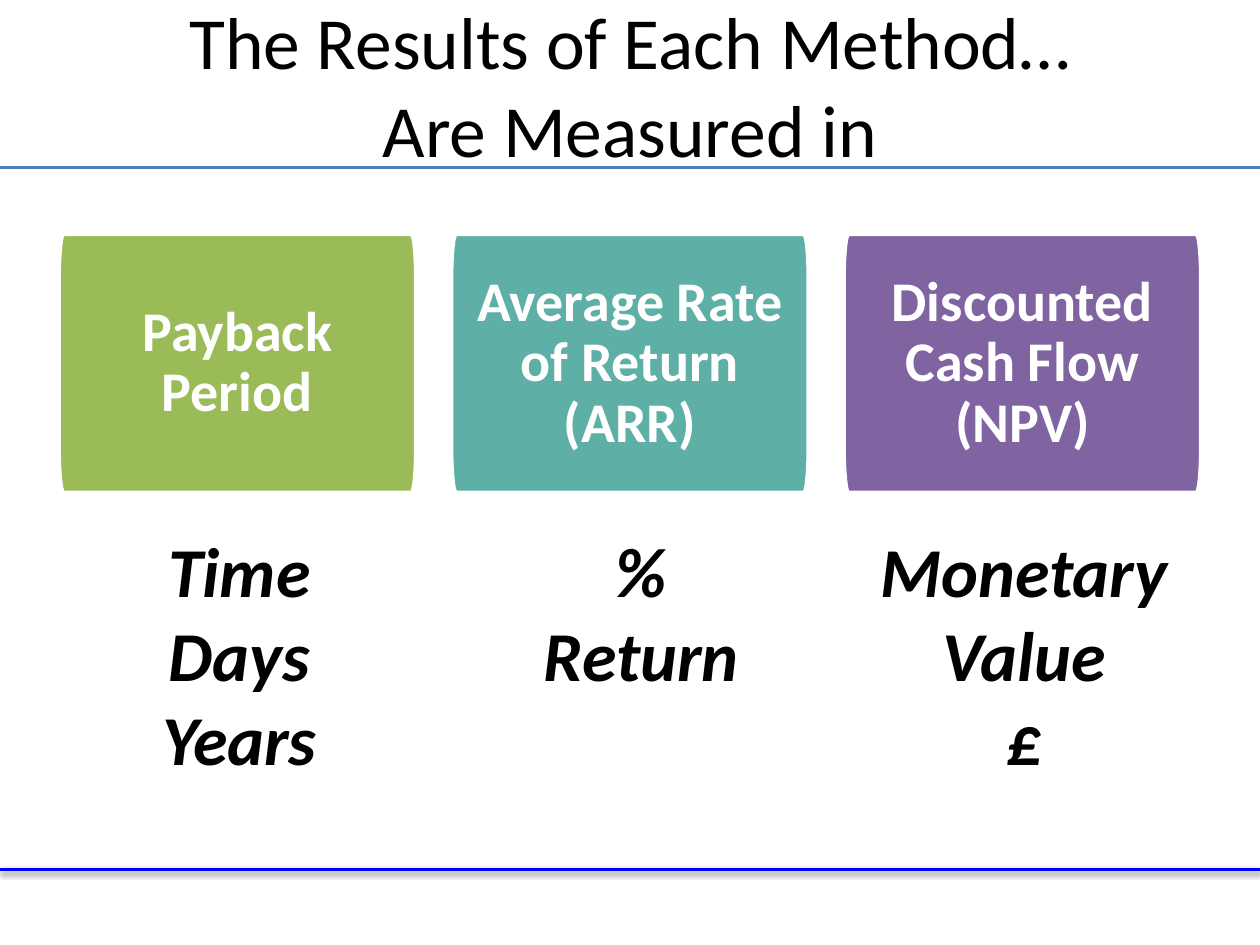
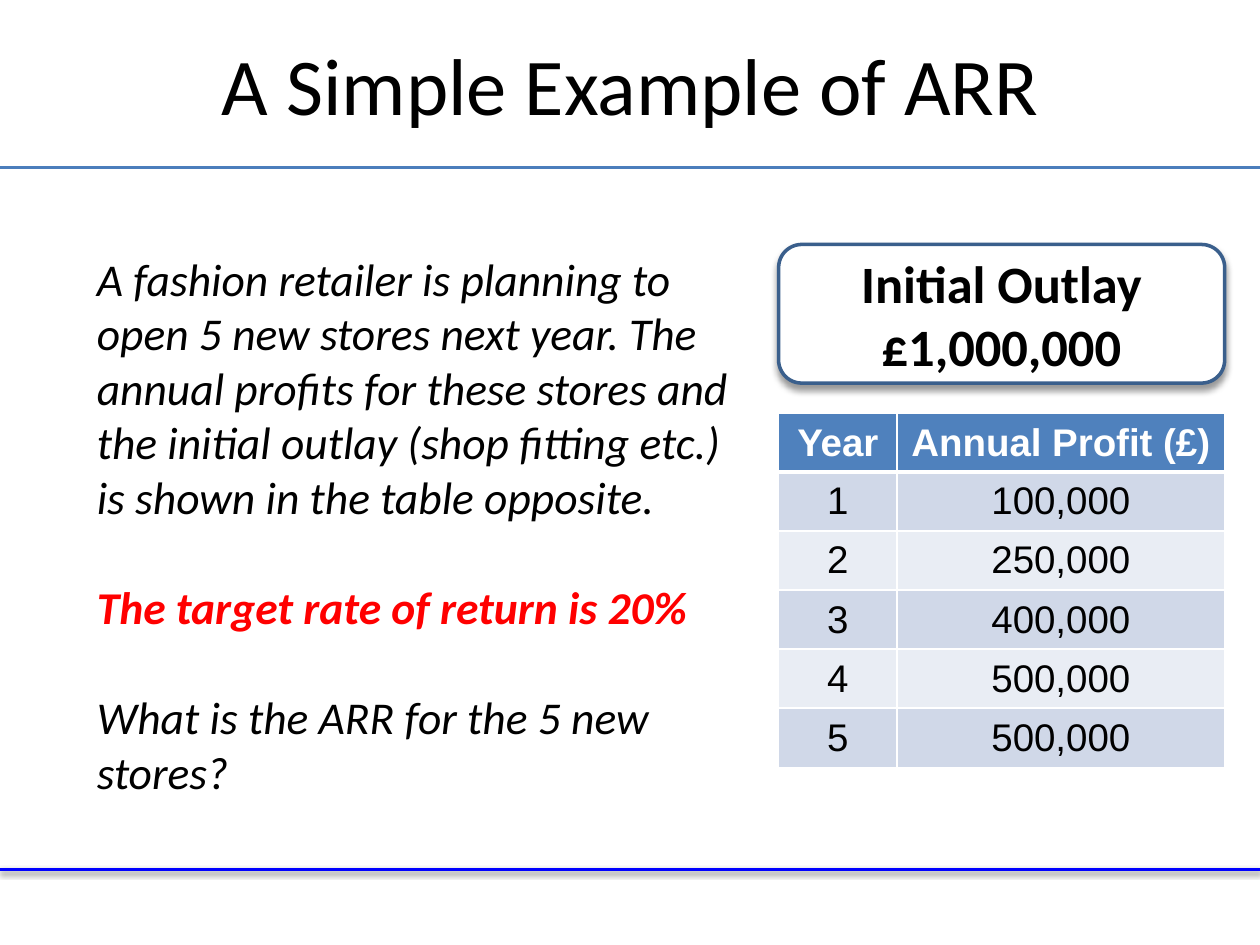
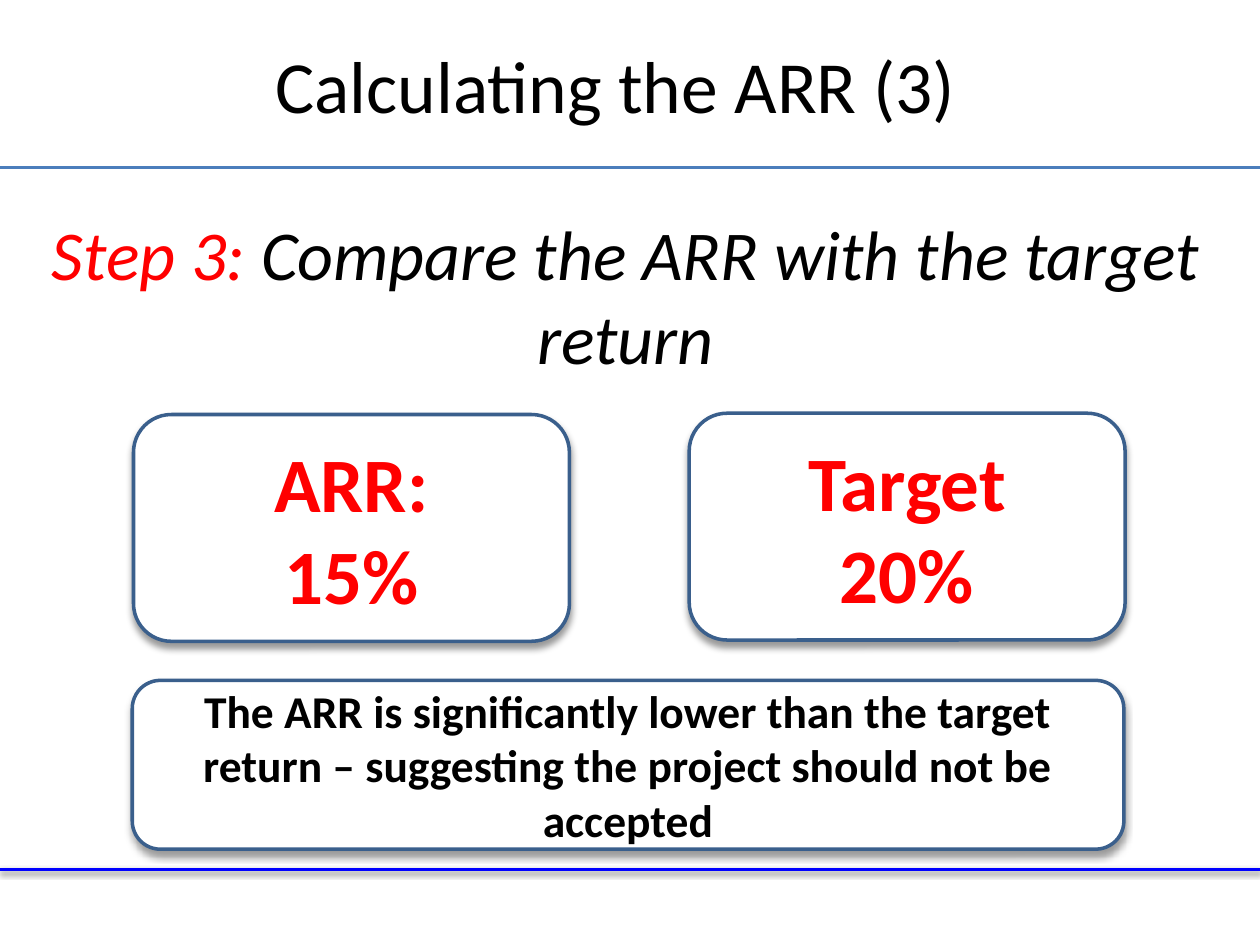
from dataclasses import dataclass
from math import cos, pi, sin

from lxml import etree
from pptx import Presentation
from pptx.dml.color import RGBColor
from pptx.enum.shapes import MSO_CONNECTOR, MSO_SHAPE
from pptx.enum.text import MSO_ANCHOR, PP_ALIGN
from pptx.oxml.ns import qn
from pptx.util import Inches, Pt

LINE = MSO_CONNECTOR.STRAIGHT
ROUND = MSO_SHAPE.ROUNDED_RECTANGLE
MID, TOP = MSO_ANCHOR.MIDDLE, MSO_ANCHOR.TOP
LEFT, MIDDLE = PP_ALIGN.LEFT, PP_ALIGN.CENTER
WIDE, HIGH = Inches(10), Inches(7.5)


@dataclass(frozen=True)
class Theme:
    font: str = "Calibri"
    grid: str = "Arial"
    black: str = "000000"
    white: str = "FFFFFF"
    red: str = "FF0000"
    blue: str = "0000FF"
    rule: str = "4B7EBC"
    edge: str = "3A5F8C"
    head: str = "4F81BD"
    bands: tuple = ("D0D8E8", "E9EDF4")
    cards: tuple = ("9BBB59", "5EAFA6", "8064A2")
    title: int = 42
    large: int = 44
    lead: int = 40
    label: int = 32
    panel: int = 30
    body: int = 26
    cell: int = 22


T = Theme()


def across(share):
    """Percent of the slide's width."""
    return round(WIDE * share / 100)


def down(share):
    """Percent of the slide's height."""
    return round(HIGH * share / 100)


def place(x, y, w, h):
    return across(x), down(y), across(w), down(h)


def rgb(code):
    return RGBColor.from_string(code)


# Text: each paragraph is a string or a list of (string, format) runs
def write(frame, *paras, size=T.body, font=T.font, color=T.black, bold=False,
          italic=False, align=MIDDLE, anchor=MID, spacing=None, gap=0):
    frame.word_wrap = True
    frame.vertical_anchor = anchor
    for i, para in enumerate(paras):
        p = frame.add_paragraph() if i else frame.paragraphs[0]
        p.alignment = align
        if spacing:
            p.line_spacing = spacing
        if i and gap:
            p.space_before = Pt(gap)
        for words, own in [(para, {})] if isinstance(para, str) else para:
            for j, line in enumerate(words.split("\v")):
                if j:
                    p.add_line_break()
                run = p.add_run()
                run.text = line
                run.font.name = font
                run.font.size = Pt(size)
                run.font.bold = own.get("bold", bold)
                run.font.italic = italic
                run.font.color.rgb = rgb(own.get("color", color))


def label(slide, area, *paras, **look):
    write(slide.shapes.add_textbox(*place(*area)).text_frame, *paras, **look)


# Lines, shadows and filled shapes
def shade(item, blur, dist, alpha):
    props = item._element.spPr
    effects = props.find(qn("a:effectLst"))
    shadow = etree.SubElement(effects, qn("a:outerShdw"), blurRad=str(Pt(blur)),
                              dist=str(Pt(dist)), dir="5400000", rotWithShape="0")
    tint = etree.SubElement(shadow, qn("a:srgbClr"), val=T.black)
    etree.SubElement(tint, qn("a:alpha"), val=str(alpha * 1000))


def rule(slide, y, color, width):
    line = slide.shapes.add_connector(LINE, 0, down(y), WIDE, down(y))
    line.line.color.rgb = rgb(color)
    line.line.width = Pt(width)
    etree.SubElement(line._element.spPr, qn("a:effectLst"))
    return line


def paint(shape, fill, edge):
    shape.shadow.inherit = False
    shape.fill.solid()
    shape.fill.fore_color.rgb = rgb(fill)
    shape.line.color.rgb = rgb(edge)
    shape.line.width = Pt(2)


def panel(slide, area, *paras, **look):
    shape = slide.shapes.add_shape(ROUND, *place(*area))
    paint(shape, T.white, T.edge)
    shade(shape, 4, 3, 40)
    write(shape.text_frame, *paras, bold=True, **look)


def card(slide, area, words, fill):
    """Box whose corners are tall, narrow quarter ellipses."""
    x, y, w, h = place(*area)
    rx, ry, steps = w / 80, h / 6, 8
    corners = ((x + rx, y + ry), (x + w - rx, y + ry),
               (x + w - rx, y + h - ry), (x + rx, y + h - ry))
    points = []
    for turn, (cx, cy) in enumerate(corners, 2):
        for step in range(steps + 1):
            angle = (turn + step / steps) * pi / 2
            points.append((round(cx + rx * cos(angle)), round(cy + ry * sin(angle))))
    pen = slide.shapes.build_freeform(*points[0], scale=1.0)
    pen.add_line_segments(points[1:], close=True)
    shape = pen.convert_to_shape()
    paint(shape, fill, T.white)
    frame = shape.text_frame
    frame.margin_left = frame.margin_right = Inches(0.17)
    frame.margin_top = frame.margin_bottom = Inches(0.17)
    write(frame, words, size=T.label, color=T.white, bold=True, spacing=0.9)


# Table
def border(cell, **widths):
    props = cell._tc.get_or_add_tcPr()
    for side in "LRTB":
        line = etree.SubElement(props, qn("a:ln" + side), w=str(Pt(widths.get(side, 1))))
        fill = etree.SubElement(line, qn("a:solidFill"))
        etree.SubElement(fill, qn("a:srgbClr"), val=T.white)


def table(slide, area, rows, cols, heights):
    grid = slide.shapes.add_table(len(rows), len(cols), *place(*area)).table
    for col, share in zip(grid.columns, cols):
        col.width = across(share)
    for r, row in enumerate(rows):
        grid.rows[r].height = down(heights[min(r, 1)])
        for c, words in enumerate(row):
            cell = grid.cell(r, c)
            border(cell, T=3 if r == 1 else 1, B=1 if r else 3)
            cell.fill.solid()
            cell.fill.fore_color.rgb = rgb(T.bands[(r - 1) % 2] if r else T.head)
            cell.vertical_anchor = MID
            write(cell.text_frame, words, size=T.cell, font=T.grid, bold=not r,
                  color=T.black if r else T.white)


# Shared frame of every slide
def start(deck, title, size=T.title, x=5, w=90):
    slide = deck.slides.add_slide(deck.slide_layouts[6])
    shade(rule(slide, 92, T.blue, 2), 3.1, 1.6, 38)
    rule(slide, 17.73, T.rule, 1.75)
    label(slide, (x, 1.07, w, 15.6), title, size=size)
    return slide


def results(deck):
    slide = start(deck, "The Results of Each Method…\vAre Measured in")
    methods = (
        ("Payback Period", 5, ("Time", "Days", "Years")),
        ("Average Rate of Return (ARR)", 36.9, ("%", "Return")),
        ("Discounted Cash Flow (NPV)", 67.3, ("Monetary", "Value", "£")),
    )
    for i, (name, x, units) in enumerate(methods):
        card(slide, (4.7 + 31.15 * i, 24.8, 28.3, 27.3), name, T.cards[i])
        label(slide, (x, 55.2, 28, 28.27), *units, size=T.lead, bold=True,
              italic=True, anchor=TOP)


def example(deck):
    slide = start(deck, "A Simple Example of ARR", size=46)
    label(slide, (6.7, 25.87, 52.8, 59.73),
          "A fashion retailer is planning to open 5 new stores next year. The annual "
          "profits for these stores and the initial outlay (shop fitting etc.) is shown "
          "in the table opposite.",
          [("The target rate of return is 20%", {"color": T.red, "bold": True})],
          "What is the ARR for the 5 new stores?",
          italic=True, align=LEFT, anchor=TOP, gap=31.7)
    profits = ("100,000", "250,000", "400,000", "500,000", "500,000")
    rows = [("Year", "Annual Profit (£)")]
    rows += [(str(year), profit) for year, profit in enumerate(profits, 1)]
    table(slide, (61.8, 43.73, 35.4, 37.33), rows, (9.4, 26), (6.1, 6.25))
    panel(slide, (61.8, 25.87, 35.4, 14.67), "Initial Outlay", "£1,000,000", size=T.panel)


def compare(deck):
    slide = start(deck, "Calculating the ARR (3)", x=1.2, w=95.3)
    label(slide, (1.2, 21.6, 96.9, 19.33),
          [("Step 3: ", {"color": T.red}), ("Compare the ARR with the target return", {})],
          size=T.lead, italic=True, anchor=TOP)
    for x, y, name, rate in ((10.6, 43.87, "ARR:", "15%"), (54.7, 43.73, "Target", "20%")):
        panel(slide, (x, y, 34.6, 24), name, rate, size=T.large, color=T.red)
    panel(slide, (10.5, 72, 78.7, 17.87),
          "The ARR is significantly lower than the target return – suggesting the "
          "project should not be accepted")


def main():
    deck = Presentation()
    deck.slide_width, deck.slide_height = WIDE, HIGH
    results(deck)
    example(deck)
    compare(deck)
    deck.save("out.pptx")


if __name__ == "__main__":
    main()
